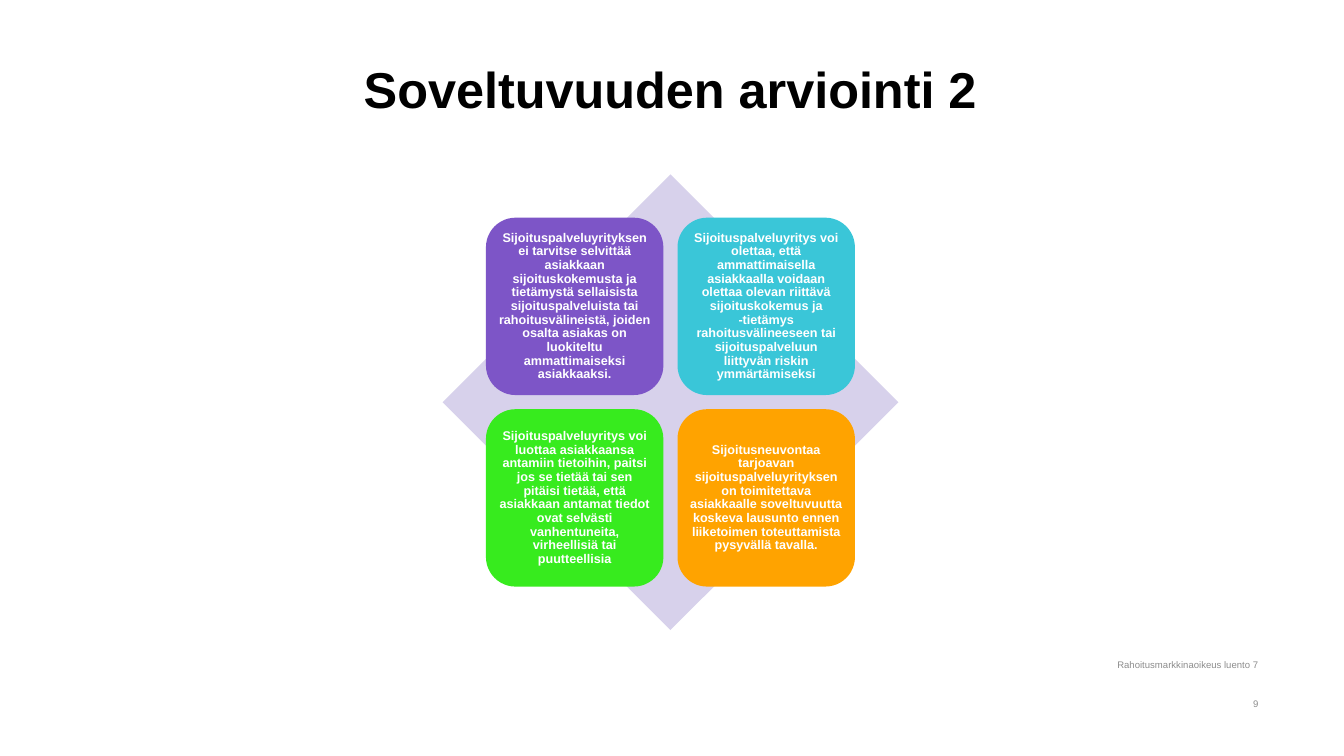
from dataclasses import dataclass

from pptx import Presentation
from pptx.dml.color import RGBColor
from pptx.enum.shapes import MSO_SHAPE as Preset
from pptx.enum.text import MSO_ANCHOR as Anchor, PP_ALIGN as Align
from pptx.util import Inches, Pt

FONT = "Arial"
CARD_SIZE = 1.76
CARD_STEP = 1.9
GRID_LEFT, GRID_TOP = 4.82, 2.16


@dataclass
class Card:
    fill: str
    text: str


CARDS = [
    Card("7D55C7", "Sijoituspalveluyrityksen ei tarvitse selvittää asiakkaan "
         "sijoituskokemusta ja tietämystä sellaisista sijoituspalveluista tai "
         "rahoitusvälineistä, joiden osalta asiakas on luokiteltu "
         "ammattimaiseksi asiakkaaksi."),
    Card("3AC6D8", "Sijoituspalveluyritys voi olettaa, että ammattimaisella "
         "asiakkaalla voidaan olettaa olevan riittävä sijoituskokemus ja "
         "-tietämys rahoitusvälineeseen tai sijoituspalveluun liittyvän "
         "riskin ymmärtämiseksi"),
    Card("37EB1E", "Sijoituspalveluyritys voi luottaa asiakkaansa antamiin "
         "tietoihin, paitsi jos se tietää tai sen pitäisi tietää, että "
         "asiakkaan antamat tiedot ovat selvästi vanhentuneita, virheellisiä "
         "tai puutteellisia"),
    Card("FFA300", "Sijoitusneuvontaa tarjoavan sijoituspalveluyrityksen on "
         "toimitettava asiakkaalle soveltuvuutta koskeva lausunto ennen "
         "liiketoimen toteuttamista pysyvällä tavalla."),
]


def rgb(hex_color: str) -> RGBColor:
    return RGBColor.from_string(hex_color)


def write(shape, text: str, *, size: float, color: str, bold: bool = False,
          align=Align.CENTER, anchor=Anchor.MIDDLE, line_spacing: float = 1.0,
          insets: tuple = (0.1, 0.05, 0.1, 0.05)) -> None:
    frame = shape.text_frame
    frame.word_wrap = True
    frame.vertical_anchor = anchor
    (frame.margin_left, frame.margin_top,
     frame.margin_right, frame.margin_bottom) = map(Inches, insets)
    paragraph = frame.paragraphs[0]
    paragraph.alignment = align
    paragraph.line_spacing = line_spacing
    run = paragraph.add_run()
    run.text = text
    run.font.name = FONT
    run.font.size = Pt(size)
    run.font.bold = bold
    run.font.color.rgb = rgb(color)


def add_block(slide, preset, left: float, top: float, size: float, fill: str):
    block = slide.shapes.add_shape(
        preset, Inches(left), Inches(top), Inches(size), Inches(size))
    block.shadow.inherit = False
    block.fill.solid()
    block.fill.fore_color.rgb = rgb(fill)
    block.line.fill.background()
    return block


def add_footer(slide, text: str, top: float, height: float) -> None:
    footer = slide.shapes.add_textbox(
        Inches(7.2), Inches(top), Inches(5.28), Inches(height))
    write(footer, text, size=6.8, color="8C8C8C", align=Align.RIGHT,
          insets=(0.1, 0.05, 0, 0.05))


def main() -> None:
    deck = Presentation()
    deck.slide_width, deck.slide_height = Inches(13.33), Inches(7.5)
    slide = deck.slides.add_slide(deck.slide_layouts[5])

    # Title
    heading = slide.shapes.title
    heading.left, heading.top = Inches(0.83), Inches(0.53)
    heading.width, heading.height = Inches(11.64), Inches(1.18)
    write(heading, "Soveltuvuuden arviointi 2", size=36, color="000000",
          bold=True, anchor=Anchor.TOP)

    # Diamond with a two-by-two grid of cards
    add_block(slide, Preset.DIAMOND, 4.39, 1.73, 4.52, "D7D1EB")
    for index, card in enumerate(CARDS):
        row, column = divmod(index, 2)
        tile = add_block(slide, Preset.ROUNDED_RECTANGLE,
                         GRID_LEFT + column * CARD_STEP,
                         GRID_TOP + row * CARD_STEP, CARD_SIZE, card.fill)
        write(tile, card.text, size=9, color="FFFFFF", bold=True,
              line_spacing=0.9, insets=(0.04, 0.04, 0.04, 0.04))

    # Footer and page number
    add_footer(slide, "Rahoitusmarkkinaoikeus luento 7", 6.51, 0.17)
    add_footer(slide, "9", 6.89, 0.18)

    deck.save("out.pptx")


if __name__ == "__main__":
    main()
